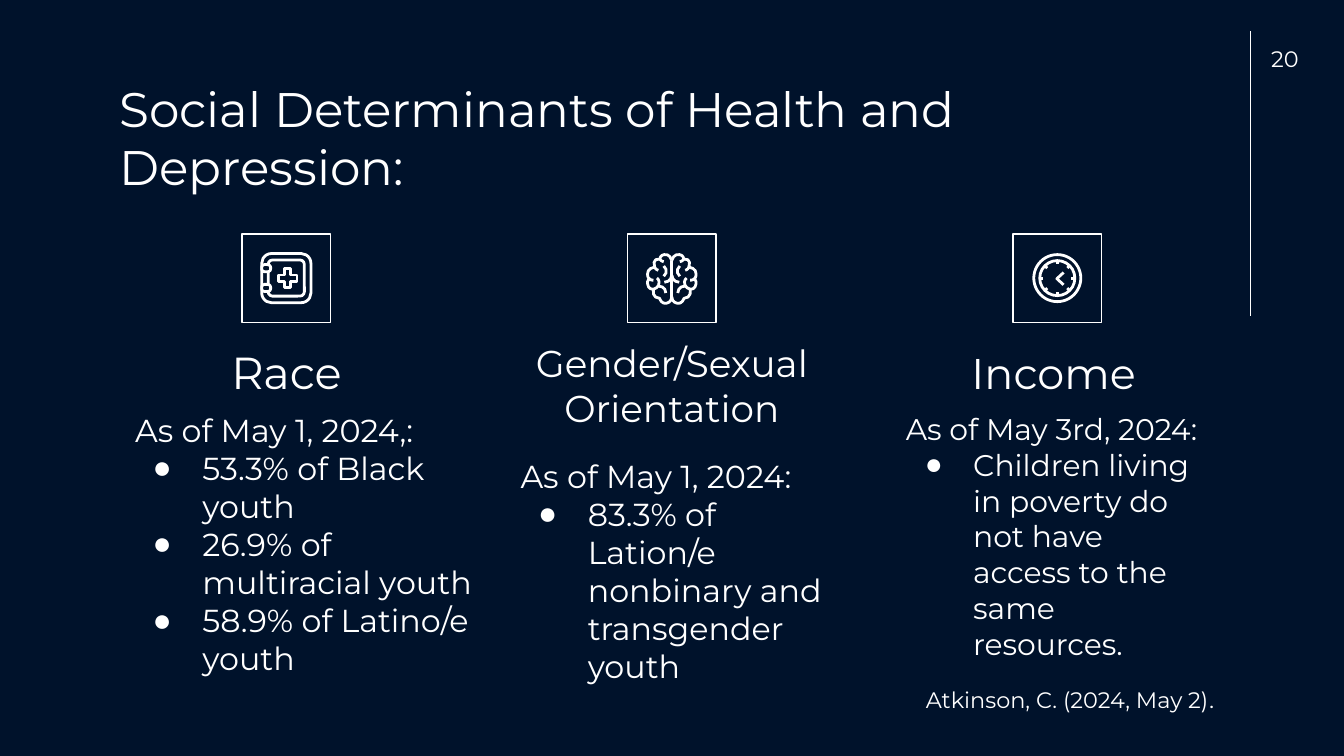
"""Build the slide on social determinants of health and depression."""
import math

import lxml.etree
import pptx
import pptx.dml.color
import pptx.enum.shapes
import pptx.enum.text
import pptx.oxml.ns
import pptx.util

Pt = pptx.util.Pt
SHAPE = pptx.enum.shapes.MSO_SHAPE
ALIGN = pptx.enum.text.PP_ALIGN
ANCHOR = pptx.enum.text.MSO_ANCHOR
NAVY, WHITE = "00122B", "FFFFFF"

COLUMN_CENTRES = [153.4 + 206.5 * index for index in range(3)]
ICON_Y = 149

BRAIN_CURVES = [
    [(0, -9.4), (1.2, -13.2), (4.2, -12.6), (6.2, -12.2), (6.4, -10.2),
     (10.6, -10.5), (9.2, -5.9), (13, -5.2), (13, -2.2), (13, -0.2),
     (12, 0.4), (13.2, 1.3), (13, 3), (12.6, 6), (9.9, 6), (10.5, 10.5),
     (6.6, 10.8), (5.5, 13.8), (3, 13.5), (0.2, 13), (0, 10)],
    [(4.3, -6.5), (1.5, -3.7), (4.3, -1)],
    [(9.2, -5.9), (8.5, -4.5), (7.2, -4.2)],
    [(6.4, -10.2), (6, -9.2), (4.3, -8.8)],
    [(12, 0.4), (11, 1.2), (9.8, 1.1)],
    [(9.9, 6), (6.6, 5), (6.8, 2), (7, 0.6), (8, 0)],
    [(7, 4.3), (3.5, 4.4), (3.2, 8)],
    [(0, -1.5), (0.5, 2), (4, 2.2)],
]


def colour(value):
    return pptx.dml.color.RGBColor.from_string(value)


def smooth_points(curve, steps=3):
    points = [curve[0]]
    for index in range(0, len(curve) - 2, 2):
        start, control, end = curve[index:index + 3]
        for step in range(1, steps + 1):
            t = step / steps
            points.append(tuple((1 - t) ** 2 * a + 2 * t * (1 - t) * b + t * t * c
                                for a, b, c in zip(start, control, end)))
    return points


class Painter:
    def __init__(self, page):
        self.page = page
        self.font = "Montserrat"
        self.bullet_font = "Arial"
        self.ink = WHITE

    def text(self, left, top, width, height, lines, size, centred=False,
             anchor=ANCHOR.TOP, hanging=0):
        box = self.page.shapes.add_textbox(Pt(left), Pt(top), Pt(width), Pt(height))
        frame = box.text_frame
        frame.word_wrap = True
        frame.vertical_anchor = anchor
        frame.margin_left = frame.margin_right = Pt(7.2)
        frame.margin_top = frame.margin_bottom = Pt(7.2)
        for index, line in enumerate(lines):
            para = frame.add_paragraph() if index else frame.paragraphs[0]
            para.text = line
            para.alignment = ALIGN.CENTER if centred else ALIGN.LEFT
            if index:
                self.bullet(para, hanging)
            para.font.name = self.font
            para.font.size = Pt(size)
            para.font.color.rgb = colour(self.ink)
        return box

    def bullet(self, para, hanging):
        properties = para._p.get_or_add_pPr()
        properties.set("marL", str(Pt(36)))
        properties.set("indent", str(-Pt(hanging)))
        qualify = pptx.oxml.ns.qn
        tint = lxml.etree.SubElement(properties, qualify("a:buClr"))
        lxml.etree.SubElement(tint, qualify("a:srgbClr"), val=self.ink)
        lxml.etree.SubElement(properties, qualify("a:buFont"), typeface=self.bullet_font)
        lxml.etree.SubElement(properties, qualify("a:buChar"), char="●")

    def outline(self, shape, weight, fill=None):
        shape.shadow.inherit = False
        if fill:
            shape.fill.solid()
            shape.fill.fore_color.rgb = colour(fill)
        else:
            shape.fill.background()
        shape.line.color.rgb = colour(self.ink)
        shape.line.width = Pt(weight)

    def shape(self, kind, x, y, half_width, half_height, weight=1.5, fill=None, adjust=None):
        shape = self.page.shapes.add_shape(
            kind, Pt(x - half_width), Pt(y - half_height),
            Pt(2 * half_width), Pt(2 * half_height))
        if adjust is not None:
            shape.adjustments[0] = adjust
        self.outline(shape, weight, fill)

    def line(self, x1, y1, x2, y2, weight):
        line = self.page.shapes.add_connector(
            pptx.enum.shapes.MSO_CONNECTOR.STRAIGHT, Pt(x1), Pt(y1), Pt(x2), Pt(y2))
        line.line.color.rgb = colour(self.ink)
        line.line.width = Pt(weight)
        lxml.etree.SubElement(line._element.spPr, pptx.oxml.ns.qn("a:effectLst"))

    def strokes(self, x, y, paths, weight=1.5):
        builder = None
        for path in paths:
            places = [(Pt(x + dx), Pt(y + dy)) for dx, dy in path]
            if builder is None:
                builder = self.page.shapes.build_freeform(*places[0])
            else:
                builder.move_to(*places[0])
            builder.add_line_segments(places[1:], close=False)
        self.outline(builder.convert_to_shape(), weight)

    def safe(self, x, y):
        self.shape(SHAPE.ROUNDED_RECTANGLE, x, y, 13.2, 13.2, adjust=0.2)
        self.shape(SHAPE.ROUNDED_RECTANGLE, x, y, 9.7, 9.7, adjust=0.12)
        for offset in (-5.3, 5.3):
            self.shape(SHAPE.ROUNDED_RECTANGLE, x - 10.8, y + offset, 2.4, 1.9,
                       fill=NAVY, adjust=0.4)
        self.shape(SHAPE.CROSS, x + 0.7, y, 5, 5, adjust=0.33)

    def brain(self, x, y):
        halves = [[(side * dx, dy) for dx, dy in smooth_points(curve)]
                  for side in (-1, 1) for curve in BRAIN_CURVES]
        self.strokes(x, y, halves + [[(0, -9.4), (0, 10)]])

    def clock(self, x, y):
        for radius in (12.6, 9.4):
            self.shape(SHAPE.OVAL, x, y, radius, radius)
        angles = [index * math.pi / 4 for index in range(8)]
        ticks = [[(radius * math.cos(angle), radius * math.sin(angle))
                  for radius in (7.6, 9.4)] for angle in angles]
        self.strokes(x, y, ticks + [[(3.4, -3), (-0.2, 0.3), (3.4, 3.6)]])


def main():
    deck = pptx.Presentation()
    deck.slide_width, deck.slide_height = Pt(720), Pt(405)
    page = deck.slides.add_slide(deck.slide_layouts[6])
    page.background.fill.solid()
    page.background.fill.fore_color.rgb = colour(NAVY)
    painter = Painter(page)

    painter.line(669.9, 16.6, 669.9, 169.2, 0.75)
    painter.text(56.9, 35.3, 607, 45.4,
                 ["Social Determinants of Health and Depression:"], 26)
    painter.text(673.9, 17, 43.2, 25.2, ["20"], 12)

    columns = [
        (painter.safe, "Race", 24, 0, 184.6, 36, 212.8, 195.8, 17, 26.6,
         ["As of May 1, 2024,:", "53.3% of Black youth",
          "26.9% of multiracial youth", "58.9% of Latino/e youth"]),
        (painter.brain, "Gender/Sexual Orientation", 20, 0, 192.2, 45.4, 237.4, 176.4, 17, 26.6,
         ["As of May 1, 2024:", "83.3% of Lation/e nonbinary and transgender youth"]),
        (painter.clock, "Income", 23, -2, 184.6, 36, 212.8, 174, 16, 25.9,
         ["As of May 3rd, 2024:",
          "Children living in poverty do not have access to the same resources."]),
    ]
    for centre, column in zip(COLUMN_CENTRES, columns):
        (icon, heading, heading_size, heading_shift, heading_top, heading_height,
         body_top, body_width, body_size, hanging, lines) = column
        left = centre - 88.1
        painter.shape(SHAPE.RECTANGLE, centre, ICON_Y, 23.7, 23.7, 0.75)
        icon(centre, ICON_Y)
        painter.text(left + heading_shift, heading_top, 176.4, heading_height, [heading],
                     heading_size, centred=True, anchor=ANCHOR.BOTTOM)
        painter.text(left, body_top, body_width, 141.8, lines, body_size, hanging=hanging)

    citation = painter.text(488.9, 360.3, 185, 28.8, ["Atkinson, C. (2024, May 2)"], 12)
    span = citation.text_frame.paragraphs[0].add_run()
    span.text = "."
    span.font.name = "Roboto"

    deck.save("out.pptx")


if __name__ == "__main__":
    main()
